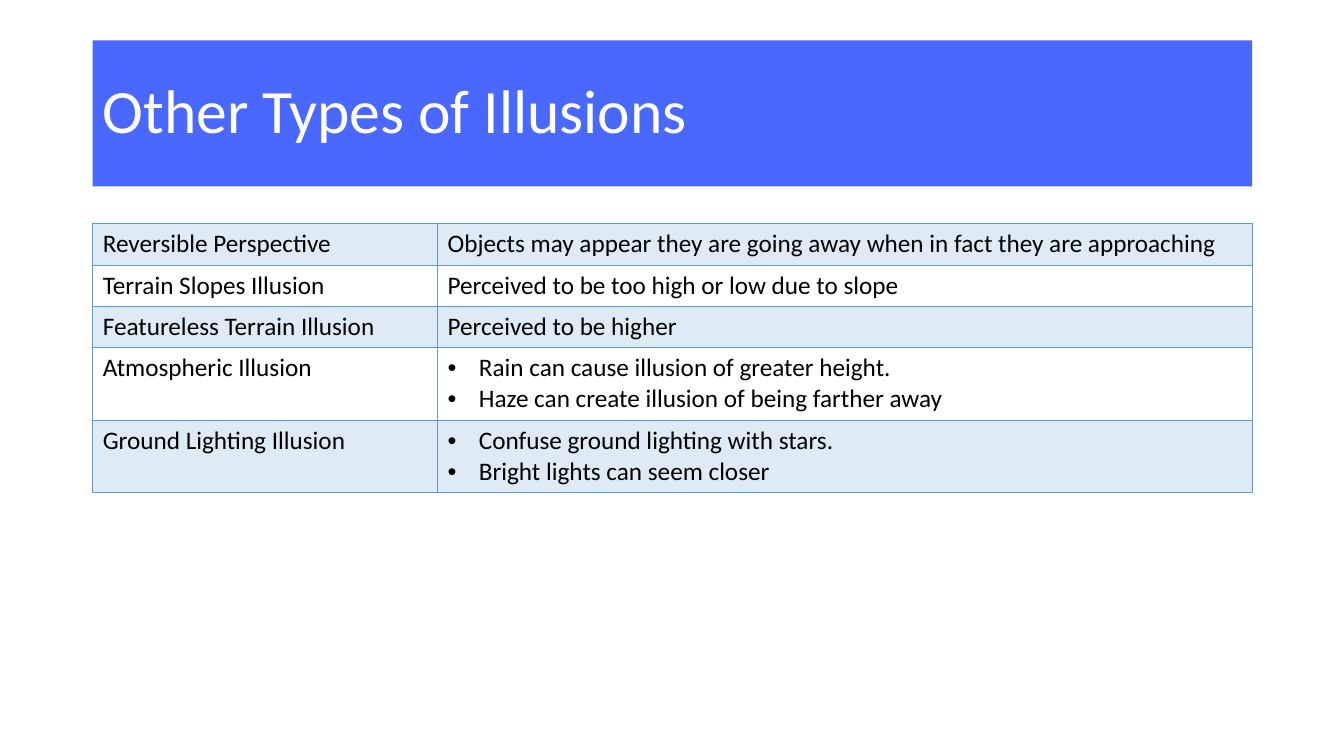
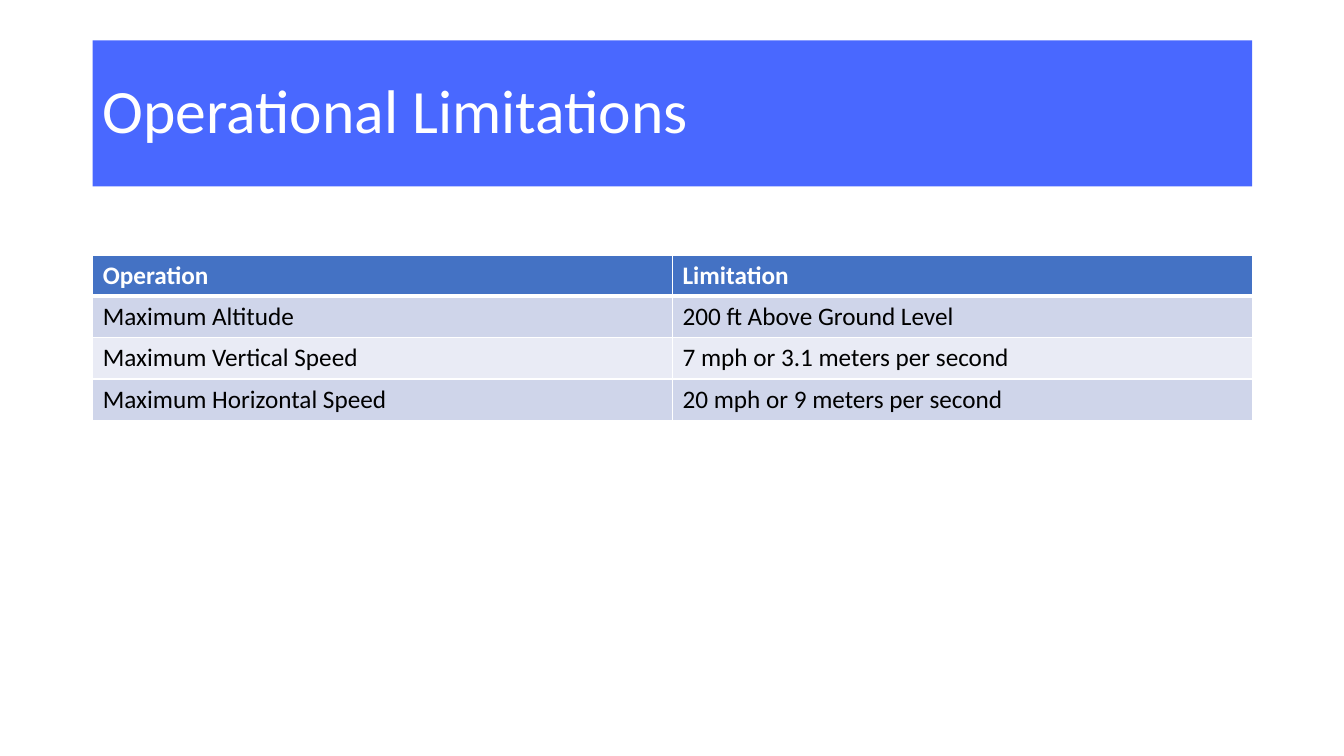
from lxml.etree import SubElement
from pptx import Presentation
from pptx.dml.color import RGBColor
from pptx.enum.shapes import MSO_SHAPE
from pptx.enum.text import MSO_ANCHOR, PP_ALIGN
from pptx.oxml.ns import qn
from pptx.util import Inches, Pt

HUES = {
    "band": "4968FF",
    "white": "FFFFFF",
    "black": "000000",
    "edge": "5B9BD5",
    "tint": "DEEBF7",
    "head": "4472C4",
    "dark": "CFD5EA",
    "light": "E9EBF5",
}
LEFT, WIDTH = 0.92, 11.5
LINE, PAD = 0.31, 0.1


class Deck:
    """Holds the shared style and the current slide."""

    def __init__(self):
        self.show = Presentation()
        self.show.slide_width = Inches(13.33)
        self.show.slide_height = Inches(7.5)
        self.slide = None

    def hue(self, name):
        return RGBColor.from_string(HUES[name])

    def style(self, para, size, hue, bold=False):
        font = para.font
        font.name = "Calibri"
        font.size = Pt(size)
        font.bold = bold
        font.color.rgb = self.hue(hue)

    def page(self, title):
        self.slide = self.show.slides.add_slide(self.show.slide_layouts[6])
        band = self.slide.shapes.add_shape(
            MSO_SHAPE.RECTANGLE, Inches(LEFT), Inches(0.4), Inches(WIDTH), Inches(1.45))
        band.shadow.inherit = False
        band.fill.solid()
        band.fill.fore_color.rgb = self.hue("band")
        band.line.fill.background()
        frame = band.text_frame
        frame.text = title
        frame.word_wrap = True
        frame.vertical_anchor = MSO_ANCHOR.MIDDLE
        para = frame.paragraphs[0]
        para.alignment = PP_ALIGN.LEFT
        para.line_spacing = 0.9
        self.style(para, 44, "white")

    def bullet(self, para):
        props = para._p.get_or_add_pPr()
        props.set("marL", str(Inches(0.31)))
        props.set("indent", str(-Inches(0.31)))
        SubElement(props, qn("a:buFont")).set("typeface", "Arial")
        SubElement(props, qn("a:buChar")).set("char", "•")

    def edge(self, cell, side, hue, width):
        props = cell._tc.get_or_add_tcPr()
        line = SubElement(props, qn(f"a:ln{side}"), w=str(Pt(width)))
        fill = SubElement(line, qn("a:solidFill"))
        SubElement(fill, qn("a:srgbClr"), val=HUES[hue])

    def cell(self, cell, text, fill, edge, top, base, head):
        for side, width in zip("LRTB", (1, 1, top, base)):
            self.edge(cell, side, edge, width)
        if fill:
            cell.fill.solid()
            cell.fill.fore_color.rgb = self.hue(fill)
        else:
            cell.fill.background()
        cell.text_frame.text = text
        paras = cell.text_frame.paragraphs
        for para in paras:
            if len(paras) > 1:
                self.bullet(para)
            self.style(para, 18, "white" if head else "black", head)

    def table(self, top, widths, rows, bands, edge, head=False):
        highs = [PAD + LINE * max(text.count("\n") + 1 for text in row) for row in rows]
        table = self.slide.shapes.add_table(
            len(rows), len(widths), Inches(LEFT), Inches(top),
            Inches(sum(widths)), Inches(sum(highs))).table
        table.first_row = head
        table.horz_banding = False
        for col, width in zip(table.columns, widths):
            col.width = Inches(width)
        for num, (row, high) in enumerate(zip(rows, highs)):
            table.rows[num].height = Inches(high)
            first = head and num == 0
            fill = "head" if first else bands[(num - head) % 2]
            rule = 3 if head and num == 1 else 1
            for col, text in enumerate(row):
                self.cell(table.cell(num, col), text, fill, edge,
                          rule, 3 if first else 1, first)


def main():
    deck = Deck()
    deck.page("Other Types of Illusions")
    deck.table(2.22, (3.42, 8.08), [
        ("Reversible Perspective",
         "Objects may appear they are going away when in fact they are approaching"),
        ("Terrain Slopes Illusion", "Perceived to be too high or low due to slope"),
        ("Featureless Terrain Illusion", "Perceived to be higher"),
        ("Atmospheric Illusion",
         "Rain can cause illusion of greater height.\n"
         "Haze can create illusion of being farther away"),
        ("Ground Lighting Illusion",
         "Confuse ground lighting with stars.\nBright lights can seem closer"),
    ], ("tint", None), "edge")

    deck.page("Operational Limitations")
    deck.table(2.53, (WIDTH / 2, WIDTH / 2), [
        ("Operation", "Limitation"),
        ("Maximum Altitude", "200 ft Above Ground Level"),
        ("Maximum Vertical Speed", "7 mph or 3.1 meters per second"),
        ("Maximum Horizontal Speed", "20 mph or 9 meters per second"),
    ], ("dark", "light"), "white", head=True)
    deck.show.save("out.pptx")


if __name__ == "__main__":
    main()
